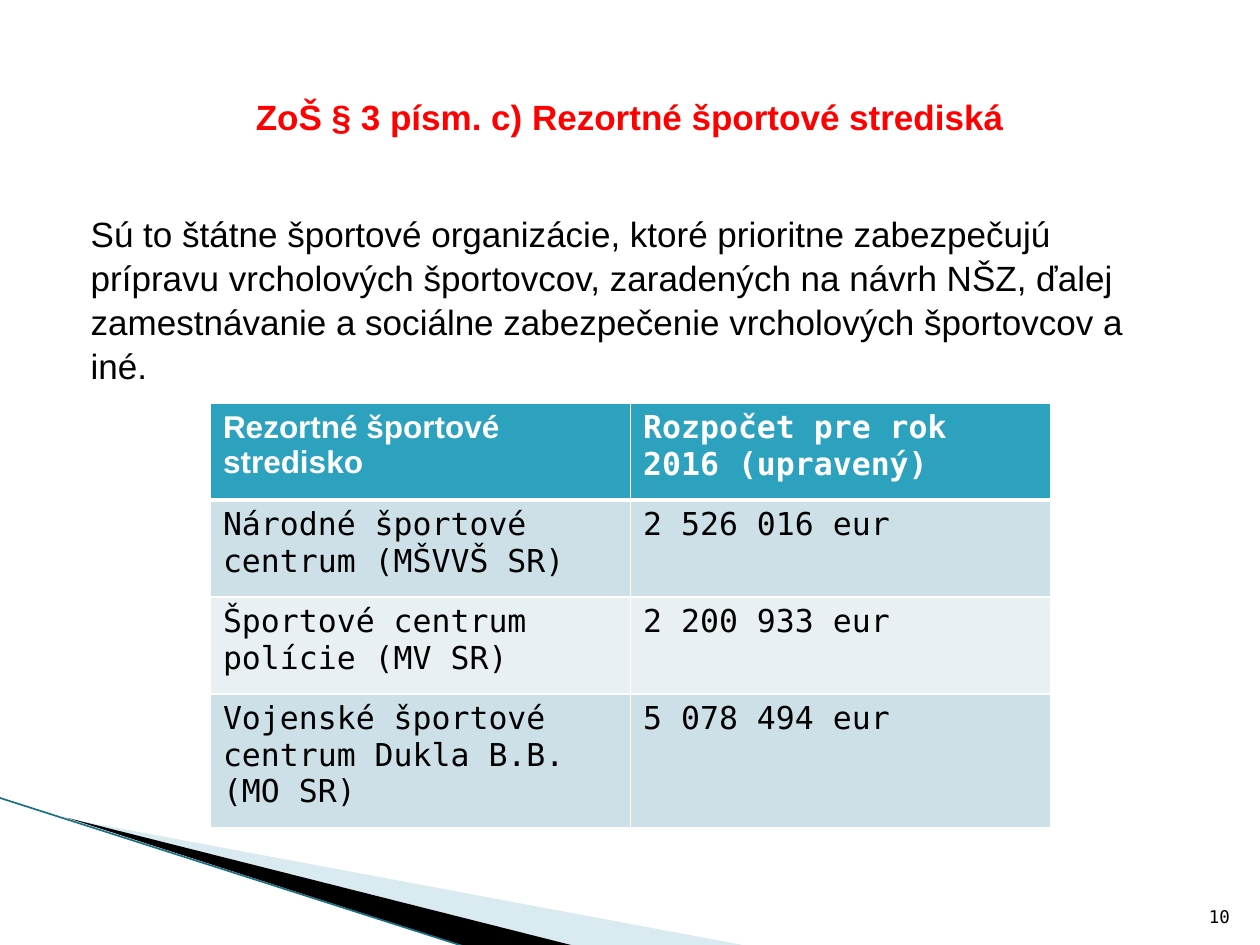
"""Build the slide on departmental sports centres and their 2016 budgets."""
from lxml import etree
from pptx import Presentation
from pptx.dml.color import RGBColor
from pptx.enum import shapes, text
from pptx.oxml import ns
from pptx.util import Emu, Inches, Pt

BLACK = RGBColor(0x00, 0x00, 0x00)
WHITE = RGBColor(0xFF, 0xFF, 0xFF)
RED = RGBColor(0xFF, 0x00, 0x00)
TEAL = RGBColor(0x2D, 0xA2, 0xBF)
DARK_TEAL = RGBColor(0x1A, 0x70, 0x86)
PALE_BLUE = RGBColor(0xA0, 0xCB, 0xDC)
ROW_ODD = RGBColor(0xCD, 0xE0, 0xE8)
ROW_EVEN = RGBColor(0xE8, 0xF0, 0xF4)
SANS, MONO = "Arial", "DejaVu Sans Mono"

EXPLANATION = (
    "Sú to štátne športové organizácie, ktoré prioritne zabezpečujú prípravu "
    "vrcholových športovcov, zaradených na návrh NŠZ, ďalej zamestnávanie a "
    "sociálne zabezpečenie vrcholových športovcov a iné."
)
BUDGETS = [
    ("Rezortné športové stredisko", "Rozpočet pre rok 2016 (upravený)"),
    ("Národné športové centrum (MŠVVŠ SR)", "2 526 016 eur"),
    ("Športové centrum polície (MV SR)", "2 200 933 eur"),
    ("Vojenské športové centrum Dukla B.B.\n(MO SR)", "5 078 494 eur"),
]
ROW_HEIGHTS = (0.77, 0.77, 0.77, 1.06)


def write(frame, wording, size, font, color, bold=False, align=text.PP_ALIGN.LEFT):
    """Put formatted wording into a text frame."""
    frame.word_wrap = True
    frame.text = wording
    for paragraph in frame.paragraphs:
        paragraph.alignment = align
        for run in paragraph.runs:
            run.font.size = Pt(size)
            run.font.name = font
            run.font.bold = bold
            run.font.color.rgb = color


def add_text(slide, box, anchor, *style, **options):
    """Add a text box and return its frame."""
    frame = slide.shapes.add_textbox(*map(Inches, box)).text_frame
    frame.vertical_anchor = anchor
    write(frame, *style, **options)
    return frame


def add_wedge(slide, corners, color, opacity=100):
    """Add a borderless polygon with an optional opacity in percent."""
    points = [(Inches(x), Inches(y)) for x, y in corners]
    builder = slide.shapes.build_freeform(*points[0])
    builder.add_line_segments(points[1:])
    wedge = builder.convert_to_shape()
    wedge.shadow.inherit = False
    wedge.fill.solid()
    wedge.fill.fore_color.rgb = color
    wedge.line.fill.background()
    if opacity < 100:
        tint = wedge.fill._xPr.find(".//" + ns.qn("a:srgbClr"))
        etree.SubElement(tint, ns.qn("a:alpha"), val=str(opacity * 1000))


def add_edge(slide, start, end, color, width):
    """Add a straight line without a shadow."""
    edge = slide.shapes.add_connector(
        shapes.MSO_CONNECTOR.STRAIGHT, *map(Inches, start + end))
    edge.line.color.rgb = color
    edge.line.width = Pt(width)
    etree.SubElement(edge._element.spPr, ns.qn("a:effectLst"))


def set_borders(cell, bottom):
    """Draw white cell borders, the bottom one with its own width."""
    properties = cell._tc.get_or_add_tcPr()
    widths = {"lnL": 1, "lnR": 1, "lnT": 1, "lnB": bottom}
    for position, (side, width) in enumerate(widths.items()):
        border = etree.Element(ns.qn("a:" + side), w=str(Pt(width)))
        fill = etree.SubElement(border, ns.qn("a:solidFill"))
        etree.SubElement(fill, ns.qn("a:srgbClr"), val=str(WHITE))
        properties.insert(position, border)


def add_budget_table(slide):
    """Add the table of centres and budgets."""
    table = slide.shapes.add_table(
        len(BUDGETS), 2, Inches(1.67), Inches(3.2), Inches(6.67),
        Inches(sum(ROW_HEIGHTS))).table
    for index, (entries, height) in enumerate(zip(BUDGETS, ROW_HEIGHTS)):
        header = index == 0
        table.rows[index].height = Inches(height)
        for column, wording in enumerate(entries):
            cell = table.cell(index, column)
            cell.fill.solid()
            cell.fill.fore_color.rgb = (
                TEAL if header else ROW_ODD if index % 2 else ROW_EVEN)
            set_borders(cell, bottom=3 if header else 1)
            write(cell.text_frame, wording, 18,
                  SANS if header and column == 0 else MONO,
                  WHITE if header else BLACK, bold=header)


def add_corner(slide):
    """Add the layered wedges in the bottom left corner."""
    add_wedge(slide, [(0.55, 6.5), (5.95, 7.51), (4.56, 7.51)], PALE_BLUE, 40)
    add_wedge(slide, [(0.53, 6.49), (4.57, 7.51), (3.72, 7.52)], BLACK)
    add_edge(slide, (-0.01, 6.33), (3.71, 7.52), DARK_TEAL, 0.95)


def main():
    """Assemble and save the slide."""
    deck = Presentation()
    deck.slide_width, deck.slide_height = Inches(10), Inches(7.5)
    slide = deck.slides.add_slide(deck.slide_layouts[6])
    add_corner(slide)
    body = add_text(slide, (0.5, 1.62, 9, 4.95), text.MSO_ANCHOR.TOP,
                    EXPLANATION, 20, SANS, BLACK)
    body.margin_left = Emu(body.margin_left + Inches(0.12))
    body.paragraphs[0].line_spacing = 1.05
    add_text(slide, (9.46, 7.01, 0.4, 0.4), text.MSO_ANCHOR.BOTTOM,
             "10", 10, MONO, BLACK, align=text.PP_ALIGN.RIGHT)
    add_text(slide, (0.5, 0.3, 9, 1.25), text.MSO_ANCHOR.MIDDLE,
             "ZoŠ § 3 písm. c) Rezortné športové strediská", 20, SANS, RED,
             bold=True, align=text.PP_ALIGN.CENTER)
    add_budget_table(slide)
    deck.save("out.pptx")


if __name__ == "__main__":
    main()
